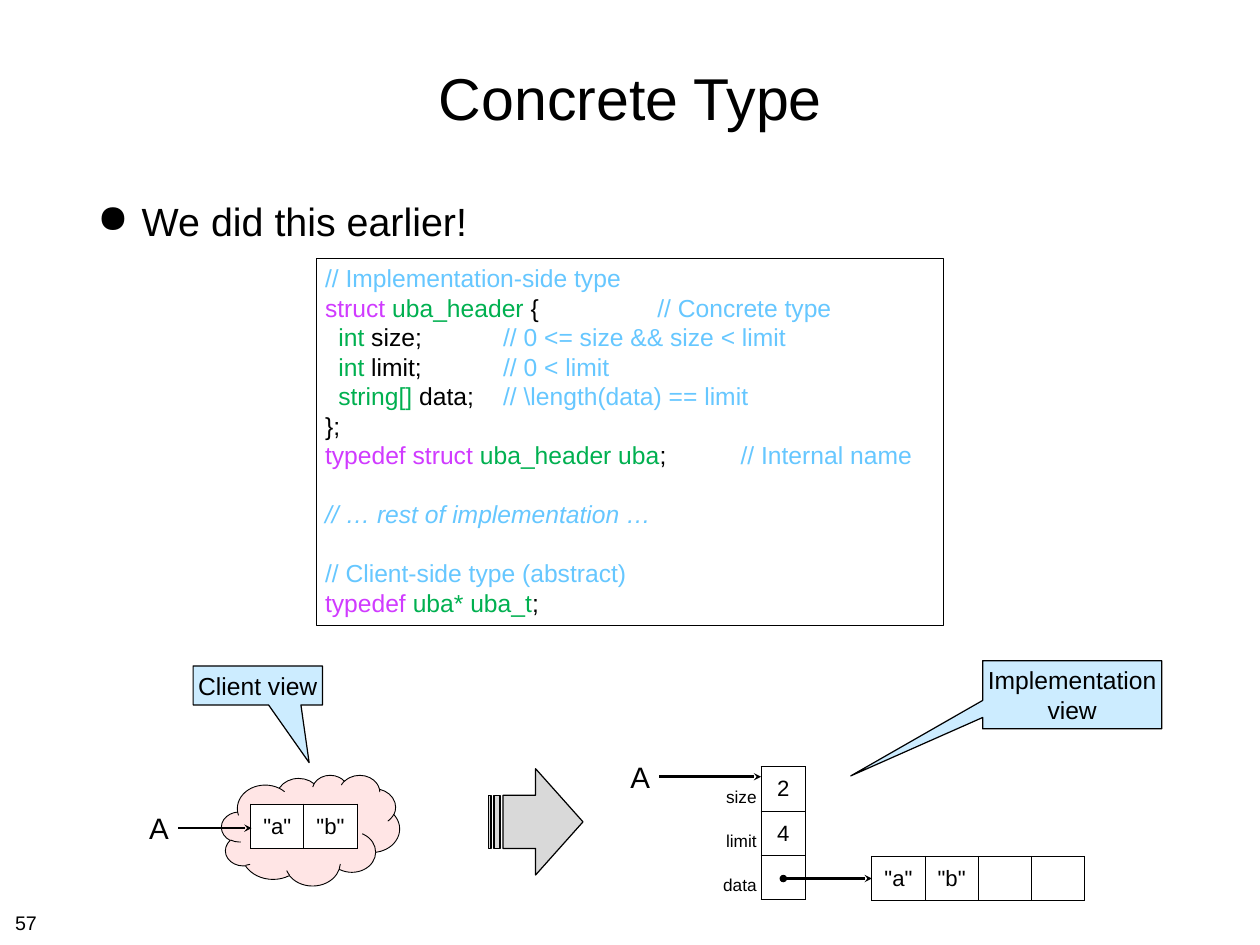
from lxml import etree
from pptx import Presentation
from pptx.dml.color import RGBColor
from pptx.enum.shapes import MSO_CONNECTOR, MSO_SHAPE
from pptx.enum.text import MSO_ANCHOR, PP_ALIGN
from pptx.oxml.ns import qn
from pptx.util import Inches, Pt

LEFT, CENTER, RIGHT = PP_ALIGN.LEFT, PP_ALIGN.CENTER, PP_ALIGN.RIGHT
TOP, MIDDLE, BOTTOM = MSO_ANCHOR.TOP, MSO_ANCHOR.MIDDLE, MSO_ANCHOR.BOTTOM
STRAIGHT = MSO_CONNECTOR.STRAIGHT
BLACK = RGBColor(0x00, 0x00, 0x00)
WHITE = RGBColor(0xFF, 0xFF, 0xFF)
COMMENT = RGBColor(0x66, 0xC7, 0xFF)
KEYWORD = RGBColor(0xD0, 0x3B, 0xFF)
TYPE = RGBColor(0x00, 0xB0, 0x50)
CALLOUT_BLUE = RGBColor(0xCC, 0xEC, 0xFF)
ARROW_GRAY = RGBColor(0xD9, 0xD9, 0xD9)
CLOUD_PINK = RGBColor(0xFF, 0xE5, 0xE5)
FONT = "Arial"

# Content: code lines as (runs, format)
STRUCT_TAB, FIELD_TAB, TYPEDEF_TAB = 3.75, 1.86, 4.69
FIELD = {"indent": 0.15, "tab": FIELD_TAB}
CODE = [
    ([("// Implementation-side type", COMMENT)], {}),
    ([("struct ", KEYWORD), ("uba_header", TYPE), (" {\t", BLACK),
      ("// Concrete type", COMMENT)], {"tab": STRUCT_TAB}),
    ([("int", TYPE), (" size;\t", BLACK),
      ("// 0 <= size && size < limit", COMMENT)], FIELD),
    ([("int", TYPE), (" limit;\t", BLACK), ("// 0 < limit", COMMENT)], FIELD),
    ([("string[]", TYPE), (" data;\t", BLACK),
      ("// \\length(data) == limit", COMMENT)], FIELD),
    ([("};", BLACK)], {}),
    ([("typedef struct ", KEYWORD), ("uba_header uba", TYPE), (";\t", BLACK),
      ("// Internal name", COMMENT)], {"tab": TYPEDEF_TAB}),
    ([("// … rest of implementation …", COMMENT)], {"italic": True, "gap": 24}),
    ([("// Client-side type (abstract)", COMMENT)], {"gap": 24}),
    ([("typedef ", KEYWORD), ("uba* uba_t", TYPE), (";", BLACK)], {}),
]
# Text boxes: text, box, format
TEXTS = [
    ("Concrete Type", (1.04, 0.28, 12.15, 1.64),
     {"size": 48, "align": CENTER, "anchor": MIDDLE, "inset": 0.06}),
    ("We did this earlier!", (1.04, 2.17, 12.14, 0.75),
     {"size": 32, "inset": 0.06, "gap": 8, "indent": 0.5, "bullet": "●"}),
    ("A", (7.01, 8.52, 0.43, 0.5), {"size": 24, "align": CENTER, "wrap": False}),
    ("A", (1.58, 9.1, 0.43, 0.5), {"size": 24, "align": CENTER, "wrap": False}),
    ("57", (0.11, 10.23, 0.37, 0.35), {"size": 16, "inset": 0.06, "wrap": False}),
]
CALLOUTS = [
    ("Client view", (2.18, 7.52, 1.46, 0.44), (0.397, 1.98)),
    ("Implementation\vview", (11.09, 7.46, 2.02, 0.77), (-1.237, 1.19)),
]
# Arrays: left, top, cells
ARRAYS = [
    (2.83, 9.08, ['"a"', '"b"']),
    (9.84, 9.67, ['"a"', '"b"', "", ""]),
]
HEADER_FIELDS = [("size", "2"), ("limit", "4"), ("data", "")]
# Arrows: start x, end x, y, start marker
ARROWS = [(8.84, 9.84, 9.92, "oval"), (7.44, 8.59, 8.77, None), (2.01, 2.84, 9.35, None)]
CELL_WIDTH, LABEL_WIDTH, VALUE_WIDTH, ROW_HEIGHT = 0.6, 0.7, 0.5, 0.5

presentation = Presentation()
presentation.slide_width, presentation.slide_height = Inches(14.22), Inches(10.67)
slide = presentation.slides.add_slide(presentation.slide_layouts[6])


def box_lengths(box):
    return [Inches(value) for value in box]


def format_frame(frame, anchor=TOP, inset=None, wrap=True):
    frame.word_wrap = wrap
    frame.vertical_anchor = anchor
    if inset is not None:
        for side in ("left", "right", "top", "bottom"):
            setattr(frame, f"margin_{side}", Inches(inset))


def write_paragraph(paragraph, runs, size, align=LEFT, gap=0, indent=0,
                    tab=None, bullet=None, italic=False):
    paragraph.alignment = align
    paragraph.space_before = Pt(gap)
    properties = paragraph._p.get_or_add_pPr()
    properties.set("marL", str(Inches(indent)))
    if bullet:
        properties.set("indent", str(-Inches(indent)))
        etree.SubElement(properties, qn("a:buChar"), char=bullet)
    if tab:
        tabs = etree.SubElement(properties, qn("a:tabLst"))
        etree.SubElement(tabs, qn("a:tab"), pos=str(Inches(tab)), algn="l")
    for text, color in runs:
        # A vertical tab in the text is a line break
        for number, part in enumerate(text.split("\v")):
            if number:
                paragraph.add_line_break()
            run = paragraph.add_run()
            run.text = part
            values = {"name": FONT, "size": Pt(size), "italic": italic}
            for name, value in values.items():
                setattr(run.font, name, value)
            run.font.color.rgb = color


def add_shape(kind, box, fill=None, line_width=1.0, adjustments=()):
    shape = slide.shapes.add_shape(kind, *box_lengths(box))
    shape.shadow.inherit = False
    if fill is None:
        shape.fill.background()
    else:
        shape.fill.solid()
        shape.fill.fore_color.rgb = fill
    shape.line.color.rgb = BLACK
    shape.line.width = Pt(line_width)
    for number, value in enumerate(adjustments):
        shape.adjustments[number] = value
    return shape


def add_table(left, top, widths, row_count):
    box = (left, top, sum(widths), ROW_HEIGHT * row_count)
    table = slide.shapes.add_table(row_count, len(widths), *box_lengths(box)).table
    table.first_row = table.horz_banding = False
    for column, width in zip(table.columns, widths):
        column.width = Inches(width)
    return table


def fill_cell(cell, text, size=18, align=CENTER, anchor=MIDDLE, fill=None,
              inset=None, borders=("L", "R", "T", "B")):
    cell.vertical_anchor = anchor
    if inset is not None:
        cell.margin_left = cell.margin_right = Inches(inset)
        cell.margin_top = cell.margin_bottom = Inches(inset)
    if text:
        write_paragraph(cell.text_frame.paragraphs[0], [(text, BLACK)], size, align)
    properties = cell._tc.get_or_add_tcPr()
    for side in ("L", "R", "T", "B"):
        border = etree.SubElement(properties, qn(f"a:ln{side}"), w=str(Pt(1)))
        if side in borders:
            solid = etree.SubElement(border, qn("a:solidFill"))
            etree.SubElement(solid, qn("a:srgbClr"), val=str(BLACK))
        else:
            etree.SubElement(border, qn("a:noFill"))
    if fill is None:
        cell.fill.background()
    else:
        cell.fill.solid()
        cell.fill.fore_color.rgb = fill


# Title, bullet, variable names and slide number
for text, box, style in TEXTS:
    style = dict(style)
    frame_style = {key: style.pop(key) for key in ("anchor", "inset", "wrap") if key in style}
    frame = slide.shapes.add_textbox(*box_lengths(box)).text_frame
    format_frame(frame, **frame_style)
    write_paragraph(frame.paragraphs[0], [(text, BLACK)], **style)

# Code listing
code_frame = add_shape(MSO_SHAPE.RECTANGLE, (3.57, 2.92, 7.08, 4.14), line_width=0.75).text_frame
format_frame(code_frame)
for number, (runs, style) in enumerate(CODE):
    paragraph = code_frame.add_paragraph() if number else code_frame.paragraphs[0]
    write_paragraph(paragraph, runs, 20, **style)

# View callouts
for text, box, adjustments in CALLOUTS:
    callout = add_shape(MSO_SHAPE.RECTANGULAR_CALLOUT, box, CALLOUT_BLUE, adjustments=adjustments)
    format_frame(callout.text_frame, MIDDLE, 0.05, wrap=False)
    write_paragraph(callout.text_frame.paragraphs[0], [(text, BLACK)], 20, CENTER)

# Step arrow and client cloud
add_shape(MSO_SHAPE.STRIPED_RIGHT_ARROW, (5.51, 8.68, 1.07, 1.2), ARROW_GRAY)
add_shape(MSO_SHAPE.CLOUD, (2.5, 8.75, 2.01, 1.25), CLOUD_PINK, 0.75)

# Arrays and header struct
for left, top, values in ARRAYS:
    table = add_table(left, top, [CELL_WIDTH] * len(values), 1)
    for column, value in enumerate(values):
        fill_cell(table.cell(0, column), value, fill=WHITE)
header = add_table(7.89, 8.66, [LABEL_WIDTH, VALUE_WIDTH], len(HEADER_FIELDS))
for row, (label, value) in enumerate(HEADER_FIELDS):
    fill_cell(header.cell(row, 0), label, 14, RIGHT, BOTTOM, inset=0.05, borders=("R",))
    fill_cell(header.cell(row, 1), value)

# Pointer arrows
for start, end, y, marker in ARROWS:
    arrow = slide.shapes.add_connector(STRAIGHT, *box_lengths((start, y, end, y)))
    arrow.line.color.rgb = BLACK
    arrow.line.width = Pt(2)
    line = arrow.line._get_or_add_ln()
    if marker:
        etree.SubElement(line, qn("a:headEnd"), type=marker)
    etree.SubElement(line, qn("a:tailEnd"), type="stealth")
    etree.SubElement(arrow._element.spPr, qn("a:effectLst"))

presentation.save("out.pptx")
